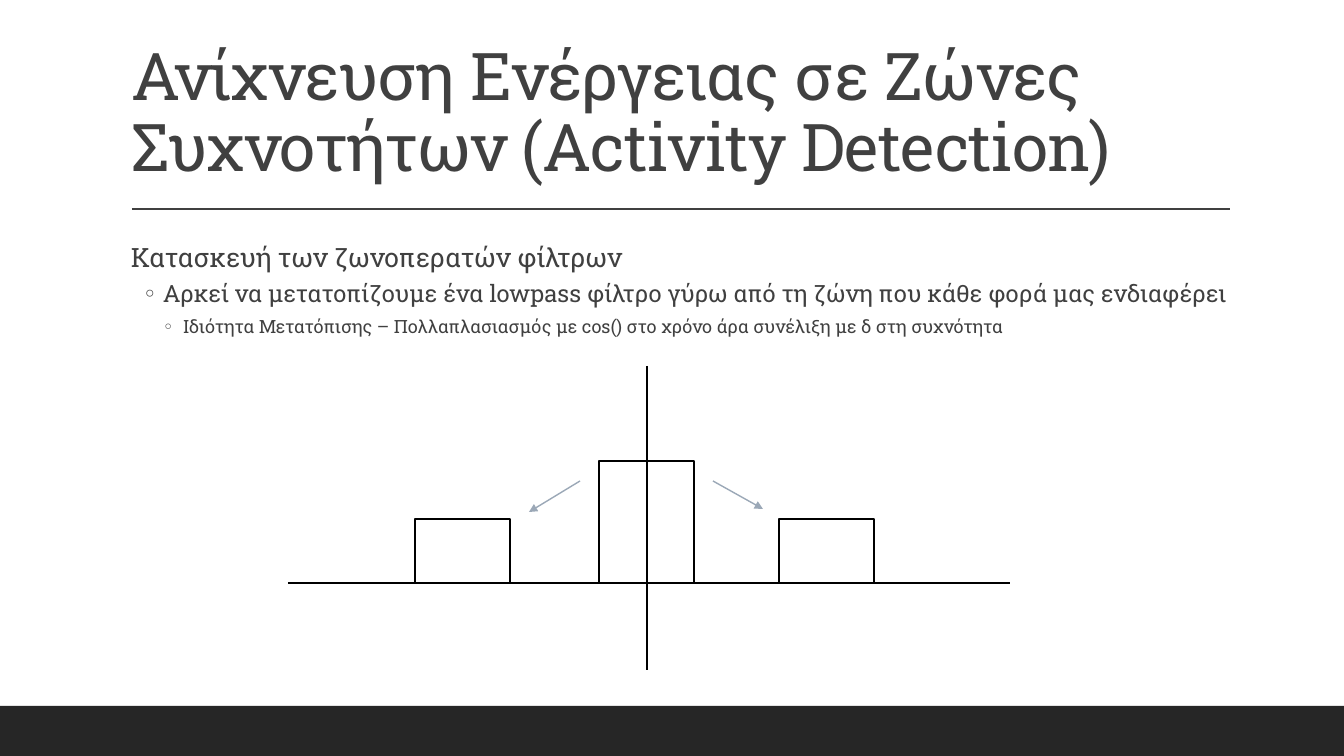
import dataclasses

import pptx
import pptx.dml.color
import pptx.enum.shapes
import pptx.enum.text
import pptx.oxml
import pptx.oxml.ns
import pptx.util


@dataclasses.dataclass(frozen=True)
class Theme:
    font: str = "Roboto Slab"
    text: str = "404040"
    band: str = "262626"
    plot: str = "000000"
    arrow: str = "9BA8B7"
    title: int = 47
    sizes: tuple = (19, 17, 13)


THEME = Theme()
WIDTH, HEIGHT = 1344, 756
BASE = 583  # frequency axis
MID = 647  # amplitude axis
BAND = 95  # width of each filter band

TITLE = "Ανίχνευση Ενέργειας σε Ζώνες Συχνοτήτων (Activity Detection)"
# text, left margin px, hanging px, points before, points after, line spacing, bullet
POINTS = [
    ("Κατασκευή των ζωνοπερατών φίλτρων", 10, 0, 12, 2, 1.1, None),
    ("Αρκεί να μετατοπίζουμε ένα lowpass φίλτρο γύρω από τη ζώνη "
     "που κάθε φορά μας ενδιαφέρει", 42, 20, 2, 4, 1.0, "◦"),
    ("Ιδιότητα Μετατόπισης – Πολλαπλασιασμός με cos() στο χρόνο "
     "άρα συνέλιξη με δ στη συχνότητα", 62, 20, 2, 4, 1.0, "◦"),
]
FILTERS = [(599, 461), (779, 519), (415, 519)]  # left, top
ARROWS = [(713, 481, 763, 509), (580, 481, 529, 512)]


def px(count):
    return pptx.util.Emu(round(count * 914400 / 100.8))


def color(code):
    return pptx.dml.color.RGBColor.from_string(code)


def add_tag(parent, tag, **values):
    node = pptx.oxml.parse_xml(f"<a:{tag} {pptx.oxml.ns.nsdecls('a')}/>")
    for name, value in values.items():
        node.set(name, value)
    parent.append(node)


def style_runs(para, size):
    for run in para.runs:
        run.font.name = THEME.font
        run.font.size = pptx.util.Pt(size)
        run.font.color.rgb = color(THEME.text)


def add_title(slide):
    title = slide.shapes.title
    title.left, title.top, title.width, title.height = map(px, (121, 31, 1109, 160))
    frame = title.text_frame
    frame.text = TITLE
    frame.word_wrap = True
    frame.auto_size = pptx.enum.text.MSO_AUTO_SIZE.NONE
    frame.vertical_anchor = pptx.enum.text.MSO_ANCHOR.BOTTOM
    para = frame.paragraphs[0]
    para.alignment = pptx.enum.text.PP_ALIGN.LEFT
    para.line_spacing = 0.9
    style_runs(para, THEME.title)
    for run in para.runs:
        run.font._element.set("spc", "-50")


def add_points(slide):
    box = slide.shapes.add_textbox(*map(px, (121, 233, 1109, 414)))
    frame = box.text_frame
    frame.word_wrap = True
    frame.margin_left = frame.margin_right = 0
    frame.text = "\n".join(point[0] for point in POINTS)
    for level, (para, point) in enumerate(zip(frame.paragraphs, POINTS)):
        _, left, hang, before, after, space, mark = point
        para.level = level
        para.line_spacing = space
        para.space_before = pptx.util.Pt(before)
        para.space_after = pptx.util.Pt(after)
        style_runs(para, THEME.sizes[level])
        props = para._p.get_or_add_pPr()
        props.set("marL", str(px(left)))
        props.set("indent", str(-px(hang)))
        if mark:
            add_tag(props, "buFont", typeface=THEME.font)
            add_tag(props, "buChar", char=mark)
        else:
            add_tag(props, "buNone")


def add_rect(slide, left, top, width, height, fill=None, line=None):
    kind = pptx.enum.shapes.MSO_SHAPE.RECTANGLE
    rect = slide.shapes.add_shape(kind, *map(px, (left, top, width, height)))
    rect.shadow.inherit = False
    if fill:
        rect.fill.solid()
        rect.fill.fore_color.rgb = color(fill)
    else:
        rect.fill.background()
    if line:
        rect.line.color.rgb = color(line)
        rect.line.width = pptx.util.Pt(1.25)
    else:
        rect.line.fill.background()


def add_line(slide, ends, code, arrow=False):
    kind = pptx.enum.shapes.MSO_CONNECTOR.STRAIGHT
    line = slide.shapes.add_connector(kind, *map(px, ends))
    line.line.color.rgb = color(code)
    line.line.width = pptx.util.Pt(1)
    if arrow:
        add_tag(line.line._get_or_add_ln(), "tailEnd", type="triangle")
    add_tag(line._element.spPr, "effectLst")


def add_plot(slide):
    add_line(slide, (288, BASE, 1010, BASE), THEME.plot)
    add_line(slide, (MID, 366, MID, 670), THEME.plot)
    for left, top in FILTERS:
        add_rect(slide, left, top, BAND, BASE - top, line=THEME.plot)
    for ends in ARROWS:
        add_line(slide, ends, THEME.arrow, arrow=True)


def main():
    deck = pptx.Presentation()
    deck.slide_width, deck.slide_height = px(WIDTH), px(HEIGHT)
    slide = deck.slides.add_slide(deck.slide_layouts.get_by_name("Title Only"))
    add_rect(slide, 0, 706, WIDTH, HEIGHT - 706, fill=THEME.band)
    add_line(slide, (132, 209, 1230, 209), THEME.text)
    add_title(slide)
    add_points(slide)
    add_plot(slide)
    deck.save("out.pptx")


if __name__ == "__main__":
    main()
